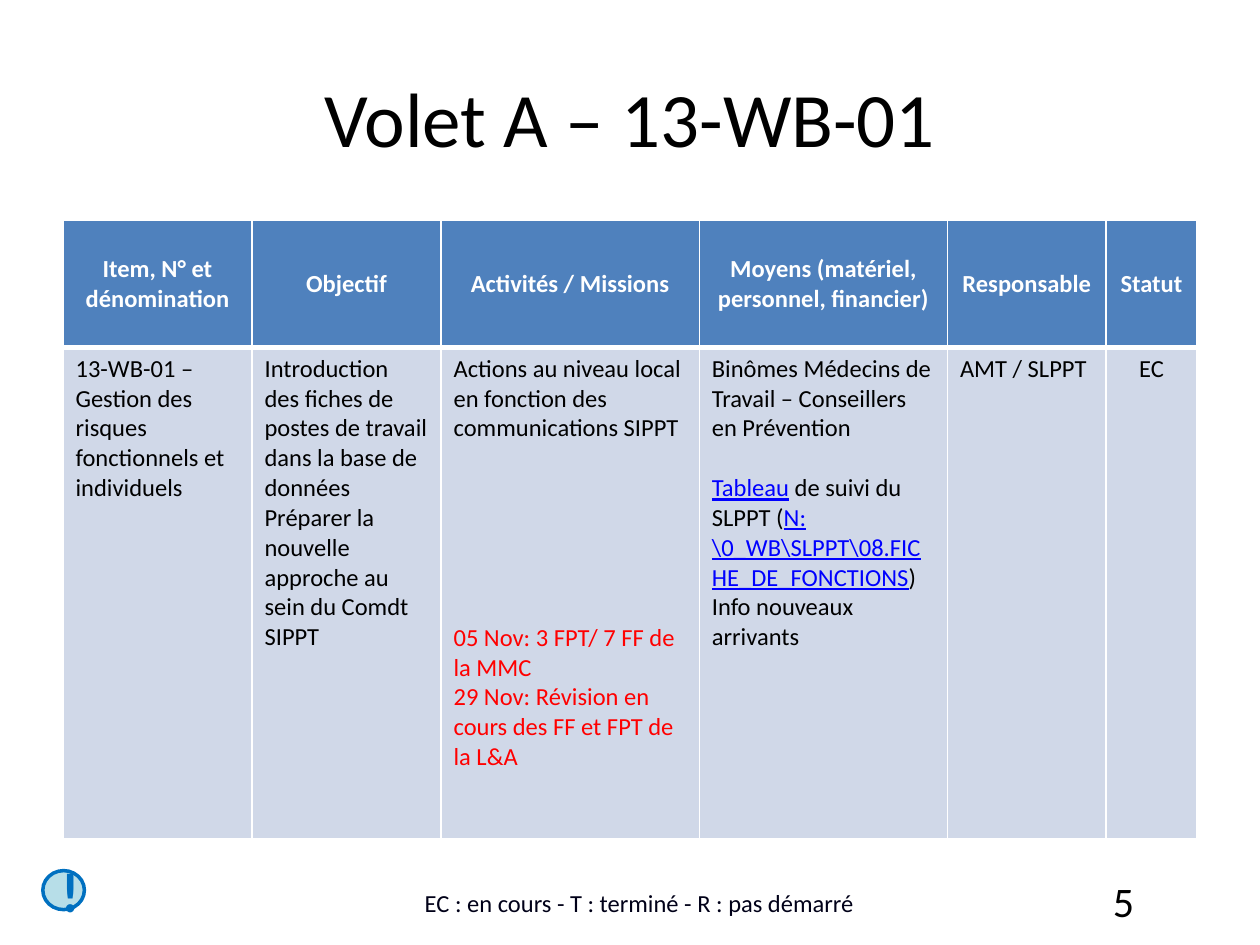
"""Build the action-plan slide for Volet A, item 13-WB-01."""
from lxml.etree import SubElement
from pptx import Presentation
from pptx.dml.color import RGBColor
from pptx.enum.shapes import MSO_SHAPE
from pptx.enum.text import MSO_ANCHOR, PP_ALIGN
from pptx.oxml.ns import qn
from pptx.util import Inches, Pt

FONT = "Calibri"
BLACK, WHITE, RED, LINK = "000000", "FFFFFF", "FF0000", "0000FF"
HEADER_FILL, BODY_FILL = "4F81BD", "D0D8E8"
BLANK_LINE = 17.1

TITLE = "Volet A – 13-WB-01"
LEGEND = "EC : en cours - T : terminé - R : pas démarré"
COLUMNS = [
    ("Item, N° et dénomination", 1.5),
    ("Objectif", 1.5),
    ("Activités / Missions", 2.05),
    ("Moyens (matériel, personnel, financier)", 1.97),
    ("Responsable", 1.26),
    ("Statut", 0.72),
]
ROW_HEIGHTS = [1.01, 3.9]

# Each paragraph: its (text, colour) spans and the number of lines left open above it.
BODY = [
    [([("13-WB-01 – Gestion des risques fonctionnels et individuels", BLACK)], 0)],
    [
        ([("Introduction des fiches de postes de travail dans la base de données", BLACK)], 0),
        ([("Préparer la nouvelle approche au sein du Comdt SIPPT", BLACK)], 0),
    ],
    [
        ([("Actions au niveau local en fonction des communications SIPPT", BLACK)], 0),
        ([("05 Nov: 3 FPT/ 7 FF de la MMC", RED)], 6),
        ([("29 Nov: Révision en cours des FF et FPT de la L&A", RED)], 0),
    ],
    [
        ([("Binômes Médecins de Travail – Conseillers en Prévention", BLACK)], 0),
        ([("Tableau", LINK), (" de suivi du SLPPT (", BLACK),
          ("N:\\0_WB\\SLPPT\\08.FICHE_DE_FONCTIONS", LINK), (")", BLACK)], 1),
        ([("Info nouveaux arrivants", BLACK)], 0),
    ],
    [([("AMT / SLPPT", BLACK)], 0)],
    [([("EC", BLACK)], 0)],
]


def color(value):
    return RGBColor.from_string(value)


def style(para, size, value, align=None, bold=False):
    para.alignment = align
    para.font.name, para.font.size, para.font.bold = FONT, Pt(size), bold
    para.font.color.rgb = color(value)


def write(shape, text, size, value, align, anchor, bold=False):
    frame = shape.text_frame
    frame.word_wrap = True
    frame.vertical_anchor = anchor
    frame.text = text
    style(frame.paragraphs[0], size, value, align, bold)


def paint(cell, fill, top, bottom):
    properties = cell._tc.get_or_add_tcPr()
    for side, width in (("L", 1), ("R", 1), ("T", top), ("B", bottom)):
        line = SubElement(properties, qn(f"a:ln{side}"), w=str(Pt(width)))
        SubElement(SubElement(line, qn("a:solidFill")), qn("a:srgbClr"), val=WHITE)
    cell.fill.solid()
    cell.fill.fore_color.rgb = color(fill)


def fill_body(cell, paragraphs, align):
    for index, (spans, open_lines) in enumerate(paragraphs):
        frame = cell.text_frame
        para = frame.add_paragraph() if index else frame.paragraphs[0]
        same = len({value for _, value in spans}) == 1
        style(para, 14, spans[0][1] if same else BLACK, align)
        if open_lines:
            para.space_before = Pt(open_lines * BLANK_LINE)
        for text, value in spans:
            span = para.add_run()
            span.text = text
            if value == LINK:
                span.font.color.rgb = color(LINK)
                span.font.underline = True


def add_plan(page):
    size = len(ROW_HEIGHTS), len(COLUMNS)
    table = page.shapes.add_table(*size, Inches(0.5), Inches(1.75), Inches(9),
                                  Inches(sum(ROW_HEIGHTS))).table
    for row, height in zip(table.rows, ROW_HEIGHTS):
        row.height = Inches(height)
    for index, ((heading, width), paragraphs) in enumerate(zip(COLUMNS, BODY)):
        table.columns[index].width = Inches(width)
        head, body = table.cell(0, index), table.cell(1, index)
        paint(head, HEADER_FILL, 1, 3)
        paint(body, BODY_FILL, 3, 1)
        head.vertical_anchor = MSO_ANCHOR.MIDDLE
        head.text = heading
        style(head.text_frame.paragraphs[0], 14, WHITE, PP_ALIGN.CENTER, True)
        fill_body(body, paragraphs, PP_ALIGN.CENTER if heading == "Statut" else PP_ALIGN.LEFT)


def place(*lengths):
    return [Inches(length) for length in lengths]


def main():
    deck = Presentation()
    deck.slide_width, deck.slide_height = place(10, 7.5)
    page = deck.slides.add_slide(deck.slide_layouts[5])

    title = page.shapes.title
    title.left, title.top, title.width, title.height = place(0.5, 0.3, 9, 1.25)
    write(title, TITLE, 44, BLACK, PP_ALIGN.CENTER, MSO_ANCHOR.MIDDLE)

    add_plan(page)

    number = page.shapes.add_textbox(*place(7.17, 6.95, 1.93, 0.4))
    write(number, "5", 24, BLACK, PP_ALIGN.RIGHT, MSO_ANCHOR.MIDDLE)
    legend = page.shapes.add_textbox(*place(2.32, 6.95, 5.51, 0.38))
    write(legend, LEGEND, 14, "000018", PP_ALIGN.CENTER, MSO_ANCHOR.BOTTOM)

    alert = page.shapes.add_shape(MSO_SHAPE.FLOWCHART_CONNECTOR, *place(0.34, 6.91, 0.33, 0.31))
    alert.shadow.inherit = False
    alert.fill.solid()
    alert.fill.fore_color.rgb = color("B7DEE8")
    alert.line.color.rgb = color("0070C0")
    alert.line.width = Pt(2)
    write(alert, "!", 32, "0070C0", PP_ALIGN.CENTER, MSO_ANCHOR.MIDDLE, True)

    deck.save("out.pptx")


if __name__ == "__main__":
    main()
